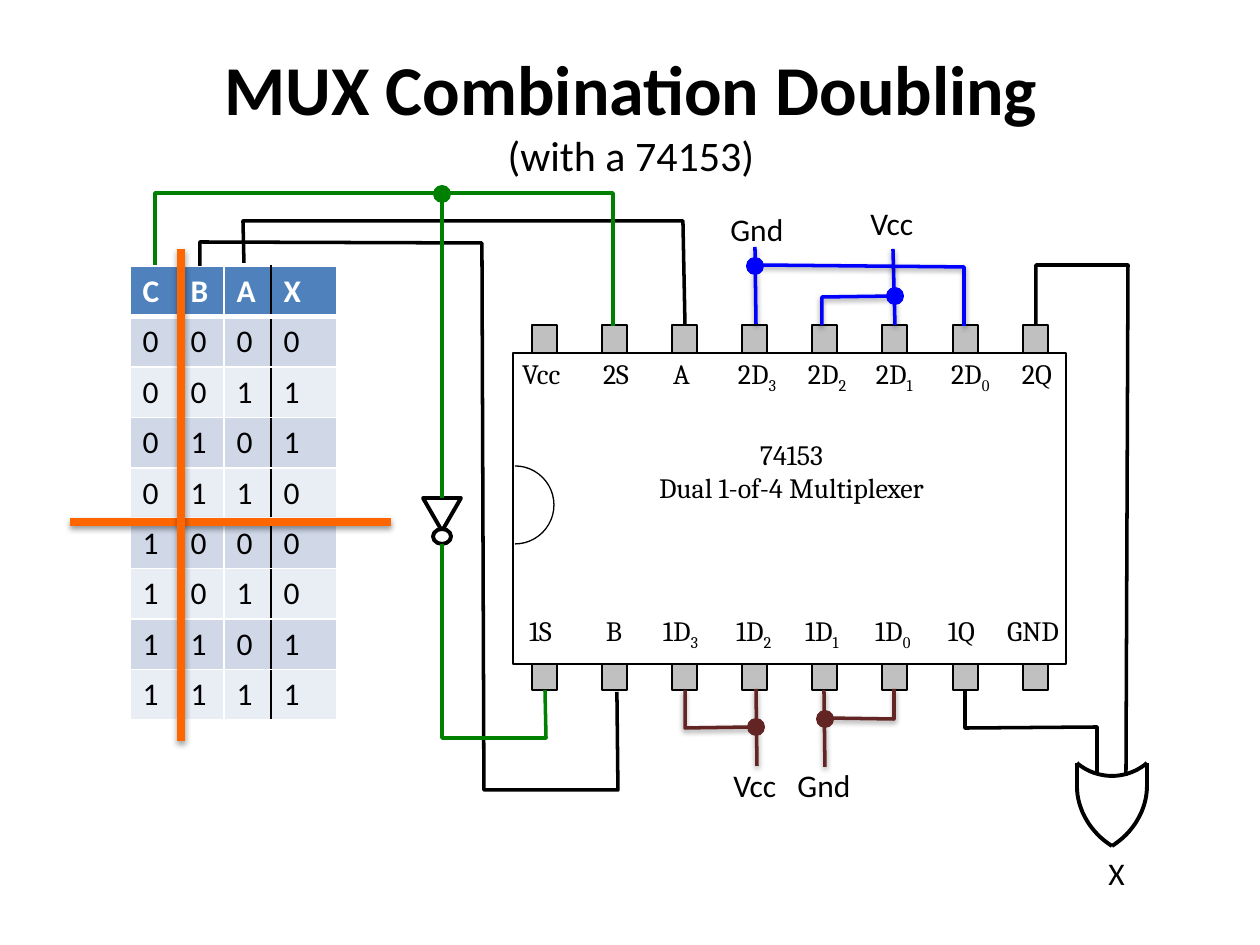
from dataclasses import dataclass
from math import cos, pi, sin

from lxml import etree
from pptx import Presentation
from pptx import util as u
from pptx.dml.color import RGBColor
from pptx.enum import shapes, text
from pptx.oxml import ns

SCALE = 914400 / 126  # EMU in one px


@dataclass(frozen=True)
class Theme:
    ink: str = "000000"
    paper: str = "FFFFFF"
    pin: str = "C0C0C0"
    select: str = "008000"
    upper_data: str = "0000FF"
    lower_data: str = "632523"
    divider: str = "FF6600"
    header: str = "4F81BD"
    bands: tuple = ("D0D8E8", "E9EDF4")
    body_font: str = "Calibri"
    chip_font: str = "Cambria"
    zero_font: str = "Times New Roman"
    title_size: int = 40
    subtitle_size: int = 24
    body_size: int = 18
    chip_size: int = 16
    outline: float = 0.75
    wire: float = 2
    gate: float = 2.25
    divider_width: float = 4.5


def px(length):
    return u.Emu(round(length * SCALE))


def rgb(color):
    return RGBColor.from_string(color)


def add_xml(parent, tag, **attributes):
    return etree.SubElement(parent, ns.qn(tag), attributes)


def write(paragraph, content, *, size, font, color, bold=False, align=None, sub_font=None):
    """Fill a paragraph; whatever follows an underscore is set as subscript."""
    paragraph.alignment = align
    for level, part in enumerate(content.split("_")):
        run = paragraph.add_run()
        run.text = part
        run.font.size, run.font.bold = u.Pt(size), bold
        run.font.name = sub_font if level and sub_font else font
        run.font.color.rgb = rgb(color)
        if level:
            run.font._element.set("baseline", "-25000")


class Board:
    def __init__(self, slide, theme):
        self.slide, self.theme = slide, theme

    def finish(self, shape, color, width, shadow=False):
        """Set the line, then replace the inherited effect; width 0 means no line."""
        if width:
            shape.line.color.rgb = rgb(color)
            shape.line.width = u.Pt(width)
        else:
            shape.line.fill.background()
        effects = add_xml(shape._element.spPr, "a:effectLst")
        if shadow:
            outer = add_xml(effects, "a:outerShdw", blurRad="40000", dist="20000",
                            dir="5400000", rotWithShape="0")
            black = add_xml(outer, "a:srgbClr", val="000000")
            add_xml(black, "a:alpha", val="38000")

    def title(self, heading, subtitle, x, y, w, h):
        t, holder = self.theme, self.slide.shapes.title
        holder.left, holder.top, holder.width, holder.height = map(px, (x, y, w, h))
        frame = holder.text_frame
        frame.auto_size = text.MSO_AUTO_SIZE.NONE
        style = dict(font=t.body_font, color=t.ink, align=text.PP_ALIGN.CENTER)
        write(frame.paragraphs[0], heading, size=t.title_size, bold=True, **style)
        write(frame.add_paragraph(), subtitle, size=t.subtitle_size, **style)

    def label(self, lines, x, y, w, h, inset=True, wrap=True, **style):
        frame = self.slide.shapes.add_textbox(*map(px, (x, y, w, h))).text_frame
        frame.word_wrap = wrap
        if not inset:
            frame.margin_left = frame.margin_top = frame.margin_right = frame.margin_bottom = 0
        for number, line in enumerate(lines):
            paragraph = frame.add_paragraph() if number else frame.paragraphs[0]
            write(paragraph, line, **style)

    def net_label(self, name, x, y, w):
        t = self.theme
        self.label([name], x, y, w, 50, wrap=False, size=t.body_size,
                   font=t.body_font, color=t.ink)

    def chip_label(self, lines, x, y, w, h, **style):
        t = self.theme
        self.label(lines, x, y, w, h, size=t.chip_size, font=t.chip_font,
                   color=t.ink, **style)

    def block(self, kind, x, y, w, h, fill, width, rotation=0):
        shape = self.slide.shapes.add_shape(kind, *map(px, (x, y, w, h)))
        shape.rotation = rotation
        shape.fill.solid()
        shape.fill.fore_color.rgb = rgb(fill)
        self.finish(shape, self.theme.ink, width)

    def dot(self, x, y, color):
        self.block(shapes.MSO_SHAPE.OVAL, x - 9, y - 9, 18, 18, color, 0)

    def wire(self, *points, color=None, width=None, shadow=False):
        start, *rest = [(px(x), px(y)) for x, y in points]
        if len(rest) == 1:
            shape = self.slide.shapes.add_connector(
                shapes.MSO_CONNECTOR.STRAIGHT, *start, *rest[0])
        else:
            builder = self.slide.shapes.build_freeform(*start)
            builder.add_line_segments(rest, close=False)
            shape = builder.convert_to_shape()
            shape.fill.background()
        self.finish(shape, color or self.theme.ink, width or self.theme.wire, shadow)

    def curve(self, a, b, c, d, steps=16):
        """Cubic Bezier stroke of a gate."""
        def point(s):
            weights = ((1 - s) ** 3, 3 * s * (1 - s) ** 2, 3 * s * s * (1 - s), s ** 3)
            return tuple(sum(k * p[axis] for k, p in zip(weights, (a, b, c, d)))
                         for axis in (0, 1))
        self.wire(*(point(i / steps) for i in range(steps + 1)), width=self.theme.gate)

    def truth_table(self, rows, x, y, widths, row_height):
        t = self.theme
        table = self.slide.shapes.add_table(
            len(rows), len(widths), px(x), px(y), px(sum(widths)),
            px(row_height * len(rows))).table
        for column, width in zip(table.columns, widths):
            column.width = px(width)
        last = len(widths) - 1
        for r, values in enumerate(rows):
            table.rows[r].height = px(row_height)
            for c, value in enumerate(values):
                cell = table.cell(r, c)
                edges = {"L": (t.ink if c == last else t.paper, 1),
                         "R": (t.ink if c == last - 1 else t.paper, 1),
                         "T": (t.paper, 3 if r == 1 else 1),
                         "B": (t.paper, 3 if r == 0 else 1)}
                for side, (color, width) in edges.items():
                    edge = add_xml(cell._tc.get_or_add_tcPr(), f"a:ln{side}",
                                   w=str(u.Pt(width)))
                    add_xml(add_xml(edge, "a:solidFill"), "a:srgbClr", val=color)
                cell.fill.solid()
                cell.fill.fore_color.rgb = rgb(t.bands[(r - 1) % 2] if r else t.header)
                write(cell.text_frame.paragraphs[0], value, size=t.body_size,
                      font=t.body_font, color=t.ink if r else t.paper, bold=r == 0)


def draw_chip(board):
    t, rect = board.theme, shapes.MSO_SHAPE.RECTANGLE
    for pin in range(8):
        board.block(rect, 532 + round(pin * 70.1), 325, 25, 365, t.pin, t.outline)
    board.block(rect, 513, 353, 553, 311, t.paper, t.outline)
    board.wire(*((515 + 39 * sin(pi * i / 24), 505 - 39 * cos(pi * i / 24))
                 for i in range(25)), width=t.outline)
    pin_rows = (
        (357, {"Vcc": 522, "2S": 603, "A": 673, "2D_3": 738, "2D_2": 808,
               "2D_1": 876, "2D_0": 951, "2Q": 1022}),
        (614, {"1S": 529, "B": 606, "1D_3": 663, "1D_2": 736, "1D_1": 805,
               "1D_0": 875, "1Q": 948, "GND": 1007}))
    for y, pins in pin_rows:
        for name, x in pins.items():
            board.chip_label([name], x, y, 69, 45, inset=False,
                             sub_font=t.zero_font if name.endswith("_0") else None)
    board.chip_label(["74153", "Dual 1-of-4 Multiplexer"], 615, 431, 353, 161,
                     align=text.PP_ALIGN.CENTER)


def draw_or_gate(board):
    middle = 1112
    for side in (-1, 1):
        def at(offset, y):
            return middle + side * offset, y
        board.curve(at(35, 786), at(35, 810), at(21, 833), at(0, 846))
        board.curve(at(35, 763), at(26, 771), at(13, 776), at(0, 776))
        board.wire(at(35, 763), at(35, 786), width=board.theme.gate)
    board.wire((1036, 326), (1036, 265), (1128, 265), (1126, 776))
    board.wire((1097, 772), (1097, 727), (965, 728), (965, 690))
    board.net_label("X", 1096, 848, 42)


def draw_select_wires(board):
    t = board.theme
    board.wire((244, 263), (243, 221), (683, 221), (685, 324))
    board.wire((200, 266), (200, 242), (482, 243), (484, 790), (618, 790), (617, 692))
    board.block(shapes.MSO_SHAPE.FLOWCHART_EXTRACT, 423, 498, 38, 33, t.paper, t.gate, 180)
    board.block(shapes.MSO_SHAPE.OVAL, 433, 529, 18, 15, t.paper, t.gate)
    for route in (((155, 265), (155, 193), (613, 193), (613, 326)),
                  ((442, 498), (442, 193)),
                  ((442, 544), (442, 738), (546, 738), (545, 690))):
        board.wire(*route, color=t.select)
    board.dot(442, 194, t.select)


def draw_data_inputs(board):
    t = board.theme
    for name, x, y, w in (("Gnd", 718, 204, 79), ("Vcc", 858, 198, 71),
                          ("Vcc", 721, 760, 71), ("Gnd", 785, 760, 79)):
        board.net_label(name, x, y, w)
    upper = (((895, 325), (893, 249)), ((822, 325), (822, 297), (894, 296)),
             ((756, 324), (755, 247)), ((964, 326), (964, 267), (755, 265)))
    lower = (((757, 766), (756, 689)), ((825, 767), (824, 690)),
             ((824, 718), (894, 719), (894, 689)), ((755, 727), (685, 728), (685, 690)))
    for color, routes, joints in ((t.upper_data, upper, ((895, 296), (755, 266))),
                                  (t.lower_data, lower, ((825, 719), (756, 727)))):
        for route in routes:
            board.wire(*route, color=color, shadow=True)
        for joint in joints:
            board.dot(*joint, color)


def main():
    deck = Presentation()
    deck.slide_width, deck.slide_height = px(1260), px(945)
    board = Board(deck.slides.add_slide(deck.slide_layouts[5]), Theme())
    t = board.theme
    board.title("MUX Combination Doubling", "(with a 74153)", 164, 38, 934, 149)
    draw_chip(board)
    board.truth_table(["CBAX", "0000", "0011", "0101", "0110", "1000", "1010", "1101", "1111"],
                      130, 266, (48, 46, 47, 66), 50)
    for ends in (((70, 522), (391, 522)), ((181, 249), (181, 741))):
        board.wire(*ends, color=t.divider, width=t.divider_width, shadow=True)
    draw_or_gate(board)
    draw_select_wires(board)
    draw_data_inputs(board)
    deck.save("out.pptx")


if __name__ == "__main__":
    main()
